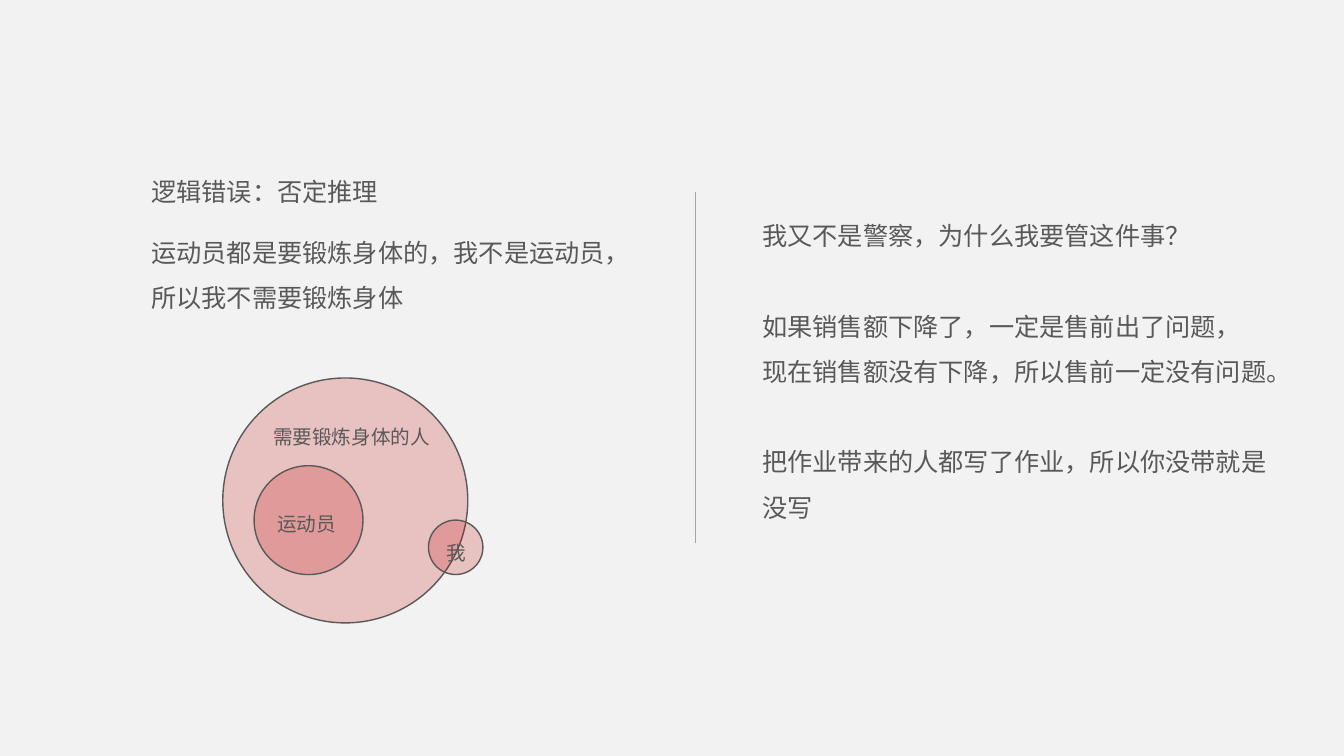
"""Builds a slide on the fallacy of denying the antecedent."""
from dataclasses import dataclass

from lxml.etree import SubElement
from pptx import Presentation
from pptx.dml.color import RGBColor
from pptx.enum.shapes import MSO_CONNECTOR as Connector, MSO_SHAPE as Preset
from pptx.enum.text import MSO_ANCHOR as Anchor, MSO_AUTO_SIZE as AutoSize, PP_ALIGN as Align
from pptx.oxml.ns import qn
from pptx.util import Inches, Pt


@dataclass(frozen=True)
class Theme:
    font: str = "Noto Sans CJK SC"
    background: RGBColor = RGBColor(0xF2, 0xF2, 0xF2)
    ink: RGBColor = RGBColor(0x59, 0x59, 0x59)
    accent: RGBColor = RGBColor(0xC0, 0x00, 0x00)
    divider: RGBColor = RGBColor(0xA5, 0xA5, 0xA5)
    accent_alpha: int = 20
    body_size: int = 18
    label_size: int = 14
    line_spacing: float = 1.5
    group_gap: int = 32


def apply_format(target, values):
    for name, value in values.items():
        setattr(target, name, value)


class SlideBuilder:
    def __init__(self, slide, theme):
        self.slide, self.theme = slide, theme
        slide.background.fill.solid()
        slide.background.fill.fore_color.rgb = theme.background

    def set_lines(self, holder, lines, size, wrap=True):
        frame = holder.text_frame
        frame.text = "\n".join(text for text, _ in lines)
        apply_format(frame, {"word_wrap": wrap, "auto_size": AutoSize.SHAPE_TO_FIT_TEXT,
                             "vertical_anchor": Anchor.TOP})
        for paragraph, (_, gap) in zip(frame.paragraphs, lines):
            apply_format(paragraph, {"alignment": Align.LEFT, "space_before": Pt(gap),
                                     "line_spacing": self.theme.line_spacing})
            properties = paragraph._p.get_or_add_pPr()
            properties.set("marL", "0")
            properties.set("indent", "0")
            SubElement(properties, qn("a:buNone"))
            font = paragraph.runs[0].font
            apply_format(font, {"name": self.theme.font, "size": Pt(size)})
            font.color.rgb = self.theme.ink
            SubElement(paragraph.runs[0]._r.get_or_add_rPr(), qn("a:ea"),
                       typeface=self.theme.font)

    def fill_placeholder(self, index, box, lines, wrap=True):
        holder = self.slide.placeholders[index]
        apply_format(holder, dict(zip(("left", "top", "width", "height"), map(Inches, box))))
        self.set_lines(holder, lines, self.theme.body_size, wrap)

    def label(self, text, box):
        holder = self.slide.shapes.add_textbox(*map(Inches, box))
        self.set_lines(holder, [(text, 0)], self.theme.label_size)

    def circle(self, left, top, diameter):
        box = map(Inches, (left, top, diameter, diameter))
        disc = self.slide.shapes.add_shape(Preset.OVAL, *box)
        disc.shadow.inherit = False
        disc.fill.solid()
        disc.fill.fore_color.rgb = self.theme.accent
        color = disc.element.spPr.find(qn("a:solidFill")).find(qn("a:srgbClr"))
        SubElement(color, qn("a:alpha"), val=str(self.theme.accent_alpha * 1000))
        disc.line.color.rgb = self.theme.ink
        disc.line.width = Pt(1)

    def vertical_rule(self, x, top, bottom):
        ends = map(Inches, (x, top, x, bottom))
        rule = self.slide.shapes.add_connector(Connector.STRAIGHT, *ends)
        rule.line.color.rgb = self.theme.divider
        rule.line.width = Pt(0.5)
        SubElement(rule.element.spPr, qn("a:effectLst"))


def main():
    deck = Presentation()
    deck.slide_width, deck.slide_height = Inches(13.33), Inches(7.5)
    theme = Theme()
    page = SlideBuilder(deck.slides.add_slide(deck.slide_layouts[3]), theme)

    page.fill_placeholder(0, (1.4, 1.55, 2.47, 0.5), [("逻辑错误：否定推理", 0)], wrap=False)
    page.fill_placeholder(1, (1.4, 2.15, 5.08, 0.94), [
        ("运动员都是要锻炼身体的，我不是运动员，所以我不需要锻炼身体", 0)])
    page.fill_placeholder(2, (7.46, 1.99, 5.28, 3.21), [
        ("我又不是警察，为什么我要管这件事？", 0),
        ("如果销售额下降了，一定是售前出了问题，", theme.group_gap),
        ("现在销售额没有下降，所以售前一定没有问题。", 0),
        ("把作业带来的人都写了作业，所以你没带就是没写", theme.group_gap)])

    for left, top, diameter in ((2.21, 3.75, 2.43), (2.52, 4.62, 1.08), (4.25, 5.16, 0.54)):
        page.circle(left, top, diameter)
    for name, left, top, width in (("需要锻炼身体的人", 2.61, 4.05, 1.91),
                                   ("运动员", 2.65, 4.91, 0.86),
                                   ("我", 4.33, 5.2, 0.86)):
        page.label(name, (left, top, width, 0.41))
    page.vertical_rule(6.9, 1.9, 5.39)

    deck.save("out.pptx")


if __name__ == "__main__":
    main()
